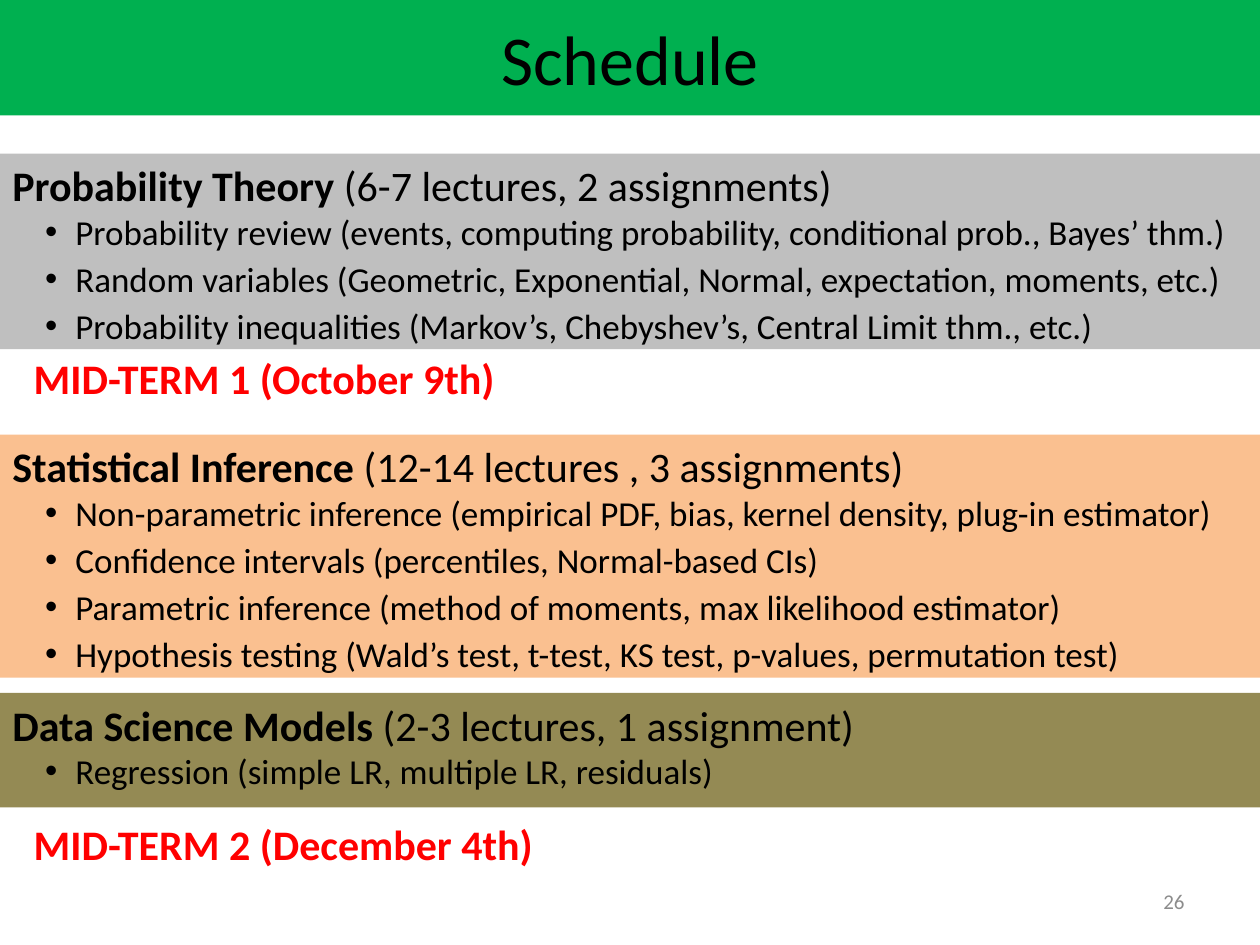
from dataclasses import dataclass

import pptx
import pptx.dml.color
import pptx.enum.shapes
import pptx.enum.text
import pptx.oxml.ns
import pptx.util
from lxml import etree

Cm = pptx.util.Cm
Pt = pptx.util.Pt
Align = pptx.enum.text.PP_ALIGN
Anchor = pptx.enum.text.MSO_ANCHOR

COLOURS = {
    "title": "00B050",
    "probability": "BFBFBF",
    "inference": "FAC090",
    "models": "948A54",
    "text": "000000",
    "exam": "FF0000",
    "number": "8C8C8C",
}
PAGE_WIDTH, PAGE_HEIGHT = 25.4, 19.05


@dataclass
class Unit:
    """A coloured course unit; lengths in centimetres."""
    top: float
    height: float
    colour: str
    name: str
    load: str
    topics: list[str]


@dataclass
class Label:
    """A single line of text without a fill; lengths in centimetres."""
    left: float
    top: float
    width: float
    height: float
    text: str
    size: int
    colour: str
    bold: bool = False
    align: Align = Align.LEFT
    anchor: Anchor = Anchor.TOP


UNITS = [
    Unit(13.97, 2.31, "models", "Data Science Models ", "(2-3 lectures, 1 assignment)", [
        "Regression (simple LR, multiple LR, residuals)",
    ]),
    Unit(8.76, 4.9, "inference", "Statistical Inference", " (12-14 lectures , 3 assignments)", [
        "Non-parametric inference (empirical PDF, bias, kernel density, plug-in estimator)",
        "Confidence intervals (percentiles, Normal-based CIs)",
        "Parametric inference (method of moments, max likelihood estimator)",
        "Hypothesis testing (Wald’s test, t-test, KS test, p-values, permutation test)",
    ]),
    Unit(3.1, 3.94, "probability", "Probability Theory ", "(6-7 lectures, 2 assignments)", [
        "Probability review (events, computing probability, conditional prob., Bayes’ thm.)",
        "Random variables (Geometric, Exponential, Normal, expectation, moments, etc.)",
        "Probability inequalities (Markov’s, Chebyshev’s, Central Limit thm., etc.)",
    ]),
]

LABELS = [
    Label(18.21, 17.65, 5.92, 1.02, "26", 12, "number",
          align=Align.RIGHT, anchor=Anchor.MIDDLE),
    Label(0.43, 6.99, 14.6, 1.27, "MID-TERM 1 (October 9th)", 24, "exam", bold=True),
    Label(0.43, 16.38, 10.8, 1.27, "MID-TERM 2 (December 4th)", 24, "exam", bold=True),
]


def add_span(para, text: str, size: int, colour: str = "text", bold: bool = False) -> None:
    span = para.add_run()
    span.text = text
    for key, value in {"name": "Calibri", "size": Pt(size), "bold": bold}.items():
        setattr(span.font, key, value)
    span.font.color.rgb = pptx.dml.color.RGBColor.from_string(COLOURS[colour])


def add_band(page, top: float, height: float, colour: str, anchor: Anchor):
    """Draw a full-width band and return its text frame."""
    band = page.shapes.add_shape(pptx.enum.shapes.MSO_SHAPE.RECTANGLE,
                                 Cm(0), Cm(top), Cm(PAGE_WIDTH), Cm(height))
    band.shadow.inherit = False
    band.fill.solid()
    band.fill.fore_color.rgb = pptx.dml.color.RGBColor.from_string(COLOURS[colour])
    band.line.fill.background()
    band.text_frame.vertical_anchor = anchor
    return band.text_frame


def add_bullet(para) -> None:
    para.level = 1
    para.space_after = Pt(3)
    properties = para._p.get_or_add_pPr()
    for key, length in {"marL": Cm(1.27), "indent": Cm(-0.61)}.items():
        properties.set(key, str(int(length)))
    for tag, key, value in (("a:buFont", "typeface", "Arial"), ("a:buChar", "char", "•")):
        etree.SubElement(properties, pptx.oxml.ns.qn(tag)).set(key, value)


def add_unit(page, unit: Unit) -> None:
    frame = add_band(page, unit.top, unit.height, unit.colour, Anchor.TOP)
    heading = frame.paragraphs[0]
    heading.alignment = Align.LEFT
    add_span(heading, unit.name, 24, bold=True)
    add_span(heading, unit.load, 24)
    for topic in unit.topics:
        para = frame.add_paragraph()
        para.alignment = Align.LEFT
        add_bullet(para)
        add_span(para, topic, 20)


def add_label(page, label: Label) -> None:
    box = page.shapes.add_textbox(Cm(label.left), Cm(label.top),
                                  Cm(label.width), Cm(label.height))
    frame = box.text_frame
    for key, value in {"word_wrap": True, "vertical_anchor": label.anchor}.items():
        setattr(frame, key, value)
    para = frame.paragraphs[0]
    para.alignment = label.align
    add_span(para, label.text, label.size, label.colour, label.bold)


def main() -> None:
    deck = pptx.Presentation()
    deck.slide_width, deck.slide_height = Cm(PAGE_WIDTH), Cm(PAGE_HEIGHT)
    page = deck.slides.add_slide(deck.slide_layouts[6])

    # Title band
    title = add_band(page, 0, 2.33, "title", Anchor.MIDDLE).paragraphs[0]
    title.alignment = Align.CENTER
    add_span(title, "Schedule", 40)

    # Course units
    for unit in UNITS:
        add_unit(page, unit)

    # Page number and exam dates
    for label in LABELS:
        add_label(page, label)

    deck.save("out.pptx")


if __name__ == "__main__":
    main()
